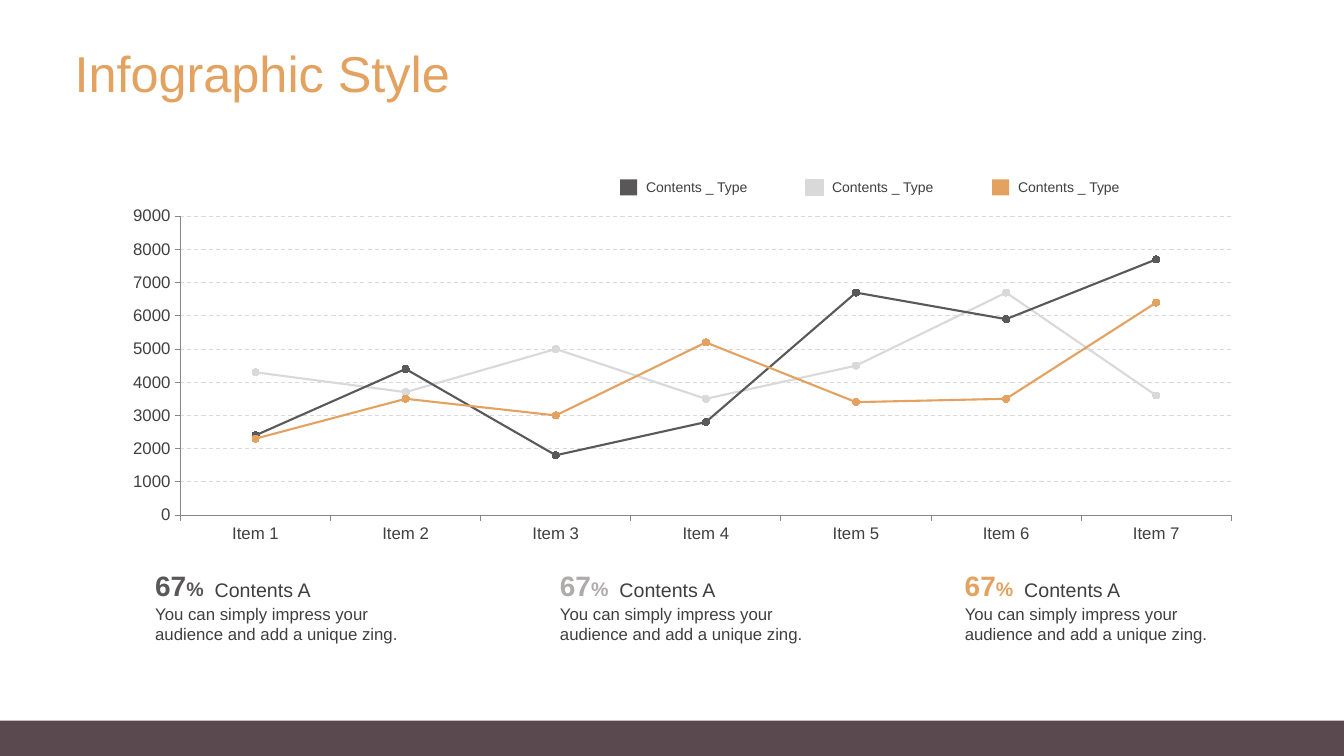
from lxml import etree
from pptx import Presentation
from pptx.chart.data import CategoryChartData
from pptx.dml.color import RGBColor
from pptx.enum.chart import XL_CHART_TYPE, XL_MARKER_STYLE, XL_TICK_MARK
from pptx.enum.dml import MSO_LINE
from pptx.enum.shapes import MSO_SHAPE
from pptx.enum.text import MSO_ANCHOR as ANCHOR, MSO_AUTO_SIZE as AUTO, PP_ALIGN
from pptx.oxml.ns import qn
from pptx.util import Inches, Pt

FONT = "Arial"
ORANGE, DARK, LIGHT, TEXT = "E3A260", "595757", "D9D9D9", "3F3F3F"


def rgb(value):
    return RGBColor.from_string(value)


def add_text(x, y, w, h, runs, color, bold=False, anchor=ANCHOR.MIDDLE):
    tf = s.shapes.add_textbox(Inches(x), Inches(y), Inches(w), Inches(h)).text_frame
    tf.word_wrap = True
    tf.vertical_anchor = anchor
    p = tf.paragraphs[0]
    p.font.name, p.font.bold = FONT, bold
    p.font.color.rgb = rgb(color)
    for text, size in runs:
        r = p.add_run()
        r.text = text
        r.font.size = Pt(size)


prs = Presentation()
prs.slide_width, prs.slide_height = Inches(13.33), Inches(7.5)
s = prs.slides.add_slide(prs.slide_layouts[5])

# Title
title = s.shapes.title
title.left, title.top = Inches(0.64), Inches(0.44)
title.width, title.height = Inches(12.66), Inches(0.92)
tf = title.text_frame
tf.text = "Infographic Style"
tf.auto_size, tf.vertical_anchor = AUTO.NONE, ANCHOR.TOP
p = tf.paragraphs[0]
p.alignment, p.line_spacing = PP_ALIGN.LEFT, 0.9
p.font.name, p.font.size = FONT, Pt(36)
p.font.color.rgb = rgb(ORANGE)

# Line chart
series_rows = [
    ("Series 1", LIGHT, (4300, 3700, 5000, 3500, 4500, 6700, 3600)),
    ("Series 2", "595959", (2400, 4400, 1800, 2800, 6700, 5900, 7700)),
    ("Series 3", ORANGE, (2300, 3500, 3000, 5200, 3400, 3500, 6400)),
]
data = CategoryChartData()
data.categories = [f"Item {n}" for n in range(1, 8)]
for name, _, values in series_rows:
    data.add_series(name, values)
chart = s.shapes.add_chart(XL_CHART_TYPE.LINE_MARKERS, Inches(1.11), Inches(1.99),
                           Inches(11.33), Inches(3.46), data).chart
chart.has_legend = chart.has_title = False
chart.font.name = FONT
for series, (_, color, _) in zip(chart.plots[0].series, series_rows):
    series.smooth = False
    series.format.line.color.rgb = rgb(color)
    series.format.line.width = Pt(1.5)
    marker = series.marker
    marker.style, marker.size = XL_MARKER_STYLE.CIRCLE, 5
    marker.format.fill.solid()
    marker.format.fill.fore_color.rgb = rgb(color)
    marker.format.line.color.rgb = rgb(color)

# Axes and gridlines
for axis in (chart.category_axis, chart.value_axis):
    axis.major_tick_mark = XL_TICK_MARK.OUTSIDE
    axis.tick_labels.font.size = Pt(12)
    axis.tick_labels.font.color.rgb = rgb("404040")
    axis.format.line.color.rgb = rgb("868686")
    axis.format.line.width = Pt(0.75)
value_axis = chart.value_axis
value_axis.minimum_scale, value_axis.maximum_scale = 0, 9000
value_axis.major_unit = 1000
grid = value_axis.major_gridlines.format.line
grid.color.rgb, grid.width, grid.dash_style = rgb(LIGHT), Pt(0.75), MSO_LINE.DASH

# Fixed inner plot area
plot_area = chart.value_axis._element.getparent()
layout = plot_area.find(qn("c:layout"))
if layout is None:
    layout = etree.Element(qn("c:layout"))
    plot_area.insert(0, layout)
manual = etree.SubElement(layout, qn("c:manualLayout"))
for tag, value in (("layoutTarget", "inner"), ("xMode", "edge"), ("yMode", "edge"),
                   ("x", "0.06"), ("y", "0.045"), ("w", "0.92"), ("h", "0.857")):
    etree.SubElement(manual, qn(f"c:{tag}")).set("val", value)

# Percentage notes
for i, color in enumerate((DARK, "AEABAB", ORANGE)):
    x = 1.44 + i * 4.015
    add_text(x, 5.59, 0.87, 0.44, [("67", 20), ("%", 14)], color, bold=True)
    add_text(x + 0.59, 5.68, 2.09, 0.34, [("Contents A", 14)], TEXT)
    add_text(x, 5.94, 2.68, 0.5,
             [("You can simply impress your audience and add a unique zing.", 12)],
             TEXT, anchor=ANCHOR.TOP)

# Legend labels, then legend squares and footer band
blocks = [(0, 7.15, 13.33, 0.35, "5A494F")]
for i, color in enumerate((DARK, LIGHT, ORANGE)):
    x = 6.15 + i * 1.845
    add_text(x + 0.16, 1.72, 1.43, 0.27, [("Contents _ Type", 10)], TEXT)
    blocks.append((x, 1.78, 0.17, 0.16, color))
for x, y, w, h, color in blocks:
    sp = s.shapes.add_shape(MSO_SHAPE.RECTANGLE, Inches(x), Inches(y), Inches(w), Inches(h))
    sp.shadow.inherit = False
    sp.fill.solid()
    sp.fill.fore_color.rgb = rgb(color)
    if color == LIGHT:
        sp.line.color.rgb = rgb(LIGHT)
        sp.line.width = Pt(1)
    else:
        sp.line.fill.background()

prs.save("out.pptx")
